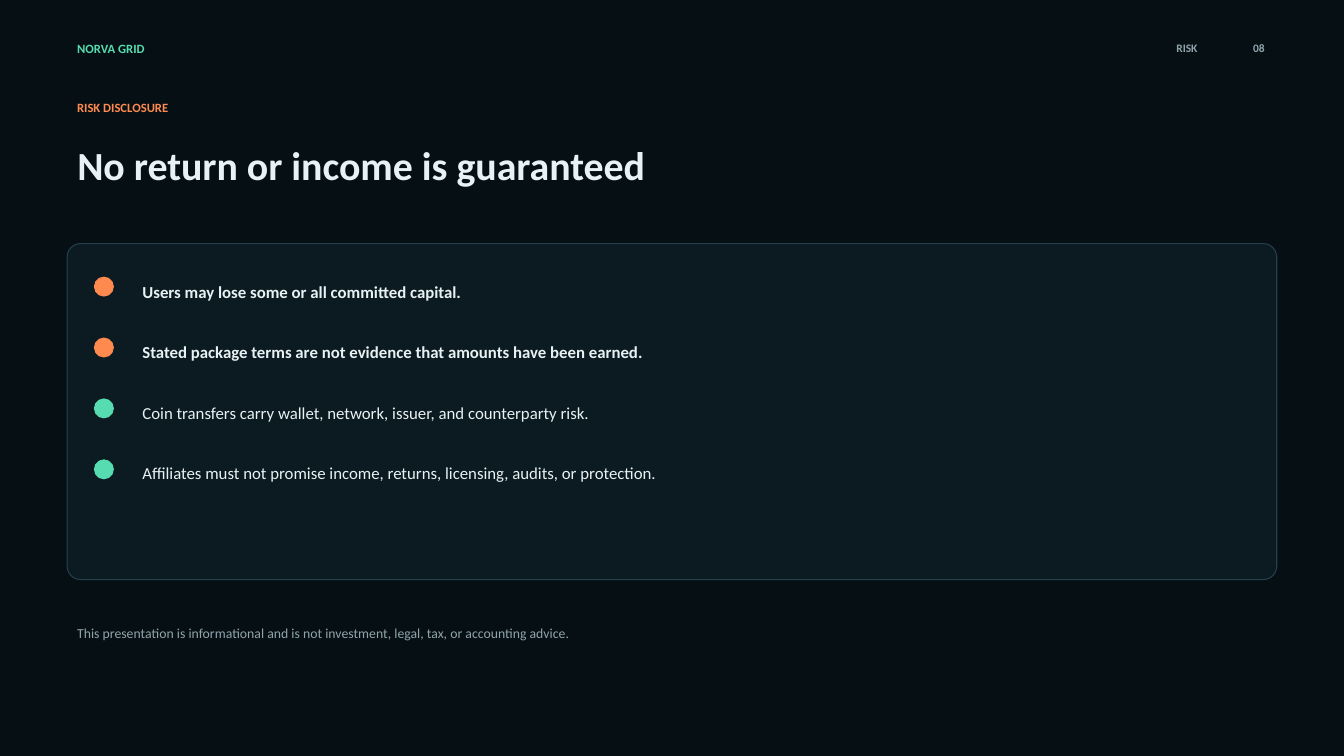
"""Build the risk disclosure slide."""
from pptx import Presentation
from pptx.dml.color import RGBColor
from pptx.enum.shapes import MSO_SHAPE as Shape
from pptx.enum.text import MSO_ANCHOR as Anchor, MSO_AUTO_SIZE as AutoSize, PP_ALIGN as Align
from pptx.oxml.ns import qn
from pptx.util import Emu, Pt

PX = 9525
FONT = "Calibri"
BACKGROUND = RGBColor(0x06, 0x10, 0x14)
PANEL = RGBColor(0x0C, 0x1B, 0x21)
BORDER = RGBColor(0x24, 0x40, 0x4A)
LIGHT = RGBColor(0xE8, 0xF1, 0xF3)
MUTED = RGBColor(0x91, 0xA4, 0xAC)
GREEN = RGBColor(0x56, 0xDC, 0xB0)
ORANGE = RGBColor(0xFF, 0x8A, 0x50)

LEFT = 64
ROW_PITCH = 58
ROW_HEIGHT = 34
RISKS = [
    ("Users may lose some or all committed capital.", True),
    ("Stated package terms are not evidence that amounts have been earned.", True),
    ("Coin transfers carry wallet, network, issuer, and counterparty risk.", False),
    ("Affiliates must not promise income, returns, licensing, audits, or protection.", False),
]


class SlideBuilder:
    """Hold the slide and its shared style."""

    def __init__(self, presentation):
        self.slide = presentation.slides.add_slide(presentation.slide_layouts[1])
        fill = self.slide.background.fill
        fill.solid()
        fill.fore_color.rgb = BACKGROUND

    def place(self, shape, box):
        shape.left, shape.top, shape.width, shape.height = (Emu(n * PX) for n in box)
        shape.element.getparent().append(shape.element)
        frame = shape.text_frame
        frame.word_wrap = True
        frame.auto_size = AutoSize.NONE
        frame.vertical_anchor = Anchor.MIDDLE
        return frame

    def style(self, paragraph, size, color, bold, align=Align.LEFT):
        paragraph.alignment = align
        for run in paragraph.runs:
            font = run.font
            font.name, font.size, font.bold = FONT, Pt(size), bold
            font.color.rgb = color

    def text(self, box, text, size, color, bold=True, align=Align.LEFT):
        frame = self.place(self.slide.shapes.add_textbox(0, 0, 0, 0), box)
        frame.text = text
        self.style(frame.paragraphs[0], size, color, bold, align)

    def title(self, box, text, size):
        frame = self.place(self.slide.shapes.title, box)
        frame.text = text
        self.style(frame.paragraphs[0], size, LIGHT, True)

    def rows(self, box, items, size, gap):
        frame = self.place(self.slide.placeholders[1], box)
        frame.text = "\n".join(text for text, _ in items)
        for index, (paragraph, (_, bold)) in enumerate(zip(frame.paragraphs, items)):
            properties = paragraph._p.get_or_add_pPr()
            properties.set("marL", "0")
            properties.set("indent", "0")
            properties.append(properties.makeelement(qn("a:buNone"), {}))
            paragraph.space_before = Pt(gap if index else 0)
            self.style(paragraph, size, LIGHT, bold)

    def rounded(self, box, radius, fill, line):
        shape = self.slide.shapes.add_shape(
            Shape.ROUNDED_RECTANGLE, *(Emu(n * PX) for n in box))
        shape.adjustments[0] = radius
        shape.shadow.inherit = False
        shape.fill.solid()
        shape.fill.fore_color.rgb = fill
        shape.line.color.rgb = line
        shape.line.width = Pt(0.75)


def main():
    presentation = Presentation()
    presentation.slide_width = Emu(1280 * PX)
    presentation.slide_height = Emu(720 * PX)
    builder = SlideBuilder(presentation)

    builder.text((LEFT, 34, 230, 24), "NORVA GRID", 9, GREEN)
    builder.text((880, 34, 270, 24), "RISK", 8.2, MUTED, align=Align.RIGHT)
    builder.text((1160, 34, 54, 24), "08", 8.2, MUTED, align=Align.RIGHT)
    builder.text((LEFT, 90, 350, 24), "RISK DISCLOSURE", 9, ORANGE)
    builder.title((LEFT, 122, 1100, 70), "No return or income is guaranteed", 28.5)

    builder.rounded((LEFT, 232, 1152, 320), 0.04, PANEL, BORDER)
    for row, (_, severe) in enumerate(RISKS):
        color = ORANGE if severe else GREEN
        builder.rounded((90, 264 + row * ROW_PITCH, 18, 18), 0.5, color, color)
    list_height = (len(RISKS) - 1) * ROW_PITCH + ROW_HEIGHT
    builder.rows((126, 260, 1020, list_height), RISKS, 12, 28.85)

    builder.text(
        (LEFT, 585, 1120, 36),
        "This presentation is informational and is not investment, legal, tax, or accounting advice.",
        9.8, MUTED, bold=False)
    presentation.save("out.pptx")


if __name__ == "__main__":
    main()
